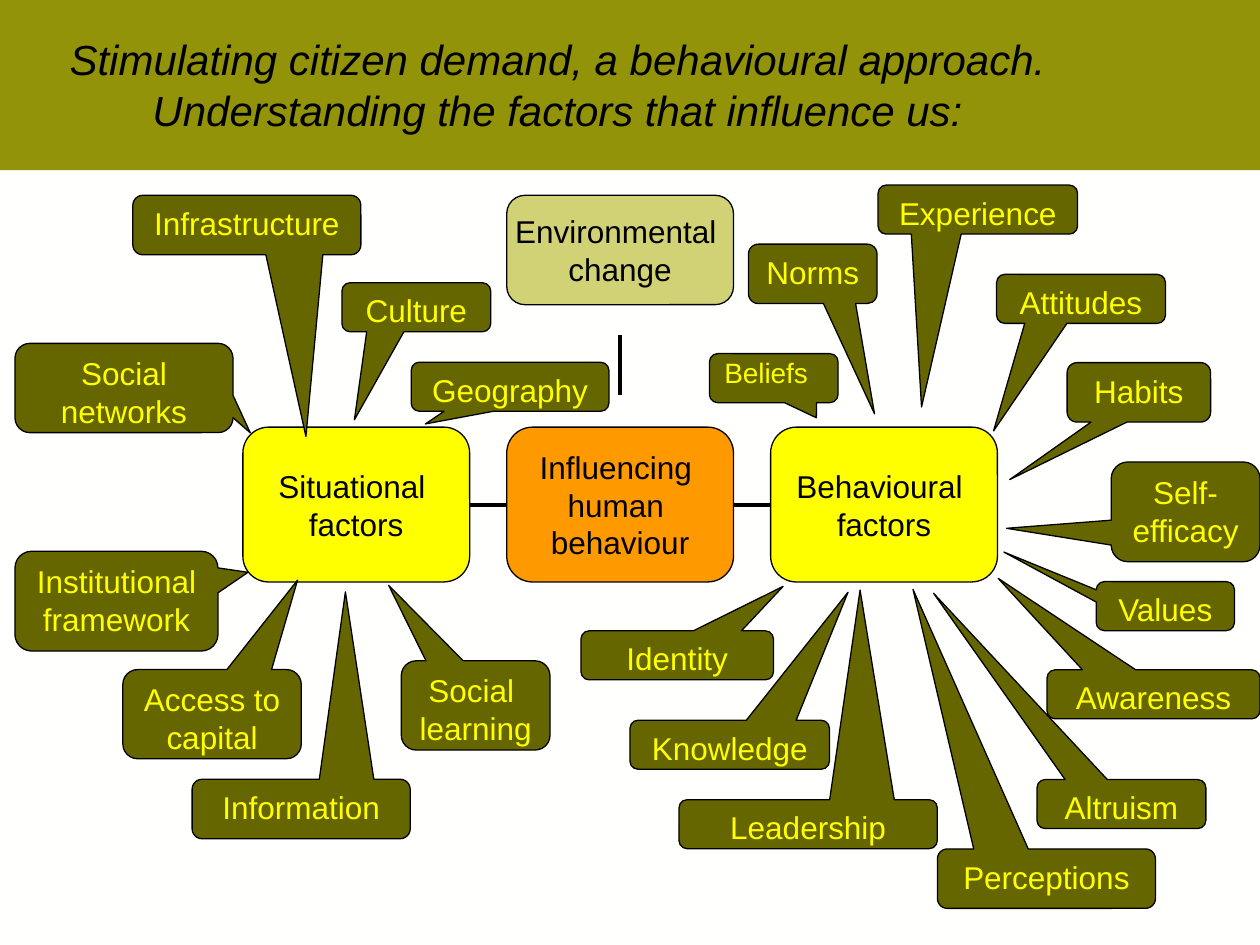
from lxml import etree
from pptx import Presentation
from pptx.dml.color import RGBColor
from pptx.enum import shapes, text
from pptx.oxml.ns import qn
from pptx.util import Pt

OLIVE, DARK_OLIVE, PALE_OLIVE = "929309", "666600", "D1D175"
YELLOW, ORANGE, BLACK, OFF_WHITE = "FFFF00", "FF9900", "000000", "FFFFFE"
CORNER = 0.167

# text, left, top, width, height, pointer x and y (as shares of the size, from the centre)
SITUATIONAL = [
    ("Social \nlearning", 220.7, 266, 85, 51, -0.585, -1.346),
    ("Information", 101.2, 333.7, 124.6, 34, 0.203, -3.651),
    ("Culture", 186.8, 50, 85, 28, -0.416, 2.297),
    ("Social networks", 0, 84.6, 124.6, 51, 0.579, 0.502),
    ("Infrastructure", 67.3, 0, 130.3, 34, 0.259, 3.555),
    ("Geography", 226.4, 95.4, 113, 28, -0.428, 0.76),
    ("Institutional\nframework", 0, 203.4, 116, 57, 0.648, -0.289),
    ("Access to capital", 61.6, 271, 102, 51, 0.479, -1.502),
]
BEHAVIOURAL = [
    ("Attitudes", 237.5, 51, 96.5, 28, -0.518, 2.694),
    ("Habits", 277.8, 101.4, 82, 34, -0.9, 1.467),
    ("Beliefs", 73.4, 96.3, 73.5, 28, 0.331, 0.808),
    ("Norms", 95.7, 33.7, 73.5, 34, 0.48, 2.353),
    ("Self-efficacy", 303, 158.2, 85, 57, -1.204, 0.165),
    ("Identity", 0, 254.7, 110, 28, 0.55, -1.407),
    ("Knowledge", 28, 305.8, 114, 28, 0.593, -3.112),
    ("Perceptions", 203.7, 379.3, 124.6, 34, -0.612, -4.864),
    ("Leadership", 56, 351.2, 147.6, 28, 0.201, -4.778),
    ("Experience", 169.8, 0, 114, 28, -0.282, 4.029),
    ("Awareness", 266.3, 277, 121.7, 28, -0.73, -2.368),
    ("Values", 294.4, 226.6, 79, 28, -1.168, -1.104),
    ("Altruism", 260.6, 339.7, 96.5, 28, -1.113, -4.302),
]


def colour(value):
    return RGBColor.from_string(value)


def set_all(target, values):
    for name, value in values.items():
        setattr(target, name, value)


def write(shape, wording, font_colour, frame_format, size=18, italic=False, paragraph_format=None):
    frame = shape.text_frame
    frame.text = wording
    set_all(frame, frame_format)
    for paragraph in frame.paragraphs:
        set_all(paragraph, paragraph_format or {"alignment": text.PP_ALIGN.CENTER})
        for run in paragraph.runs:
            set_all(run.font, {"name": "Arial", "size": Pt(size), "italic": italic})
            run.font.color.rgb = colour(font_colour)


def add_filled(slide, kind, box, fill, outlined=True):
    shape = slide.shapes.add_shape(kind, *map(Pt, box))
    shape.shadow.inherit = False
    shape.fill.solid()
    shape.fill.fore_color.rgb = colour(fill)
    if outlined:
        shape.line.color.rgb = colour(BLACK)
        shape.line.width = Pt(0.75)
    else:
        shape.line.fill.background()
    return shape


def add_line(slide, start=(0, 0), end=(0, 0)):
    line = slide.shapes.add_connector(shapes.MSO_CONNECTOR.STRAIGHT, *map(Pt, start + end))
    line.line.color.rgb = colour(BLACK)
    line.line.width = Pt(2.25)
    etree.SubElement(line._element.spPr, qn("a:effectLst"))
    return line


def draw_header(slide, left, top, width, height):
    add_filled(slide, shapes.MSO_SHAPE.RECTANGLE, (left, top, width, height), OLIVE, outlined=False)
    title = slide.shapes.add_textbox(Pt(left + 10.8), Pt(top + 12.2), Pt(615.6), Pt(72))
    write(title, "Stimulating citizen demand, a behavioural approach. "
          "Understanding the factors that influence us:", BLACK,
          {"word_wrap": True, "vertical_anchor": text.MSO_ANCHOR.MIDDLE}, size=24, italic=True)


def draw_hubs(slide, left, top):
    """Draw the row of three central boxes, the box above it and their links."""
    width, pitch, row_top = 129.6, 150.8, 132.5
    frame_format = {"word_wrap": False, "vertical_anchor": text.MSO_ANCHOR.MIDDLE}
    frame_format.update({f"margin_{side}": 0 for side in ("left", "top", "right", "bottom")})

    def add_hub(wording, column, y, height, fill):
        box = (left + column * pitch, top + y, width, height)
        hub = add_filled(slide, shapes.MSO_SHAPE.ROUNDED_RECTANGLE, box, fill)
        hub.adjustments[0] = CORNER
        write(hub, wording, BLACK, frame_format)
        return hub

    add_hub("Environmental \nchange", 1, 0, 62.5, PALE_OLIVE)
    row = [
        add_hub(wording, column, row_top, 88.5, fill)
        for column, (wording, fill) in enumerate([
            ("Situational \nfactors", YELLOW),
            ("Influencing \nhuman \nbehaviour", ORANGE),
            ("Behavioural \nfactors", YELLOW),
        ])
    ]
    for before, after in zip(row, row[1:]):
        link = add_line(slide)
        link.begin_connect(before, 3)
        link.end_connect(after, 1)
    middle = left + pitch + width / 2
    add_line(slide, (middle, top + 80), (middle, top + 114.3))


def draw_callouts(slide, left, top, callouts):
    for wording, x, y, width, height, pointer_x, pointer_y in callouts:
        callout = add_filled(slide, shapes.MSO_SHAPE.ROUNDED_RECTANGULAR_CALLOUT,
                             (left + x, top + y, width, height), DARK_OLIVE)
        for index, value in enumerate((pointer_x, pointer_y, CORNER)):
            callout.adjustments[index] = value
        frame_format = {"word_wrap": True, "vertical_anchor": text.MSO_ANCHOR.TOP}
        if wording == "Beliefs":
            write(callout, wording, YELLOW, frame_format, size=16, paragraph_format={
                "alignment": text.PP_ALIGN.LEFT, "line_spacing": 0.8, "space_before": Pt(3.2)})
        else:
            write(callout, wording, YELLOW, frame_format)


def main():
    presentation = Presentation()
    set_all(presentation, {"slide_width": Pt(720), "slide_height": Pt(540)})
    slide = presentation.slides.add_slide(presentation.slide_layouts[6])
    slide.background.fill.solid()
    slide.background.fill.fore_color.rgb = colour(OFF_WHITE)
    draw_header(slide, 0, 0, 720, 97.2)
    draw_hubs(slide, 138.8, 111.6)
    draw_callouts(slide, 8.6, 111.6, SITUATIONAL)
    draw_callouts(slide, 332, 105.8, BEHAVIOURAL)
    presentation.save("out.pptx")


if __name__ == "__main__":
    main()
